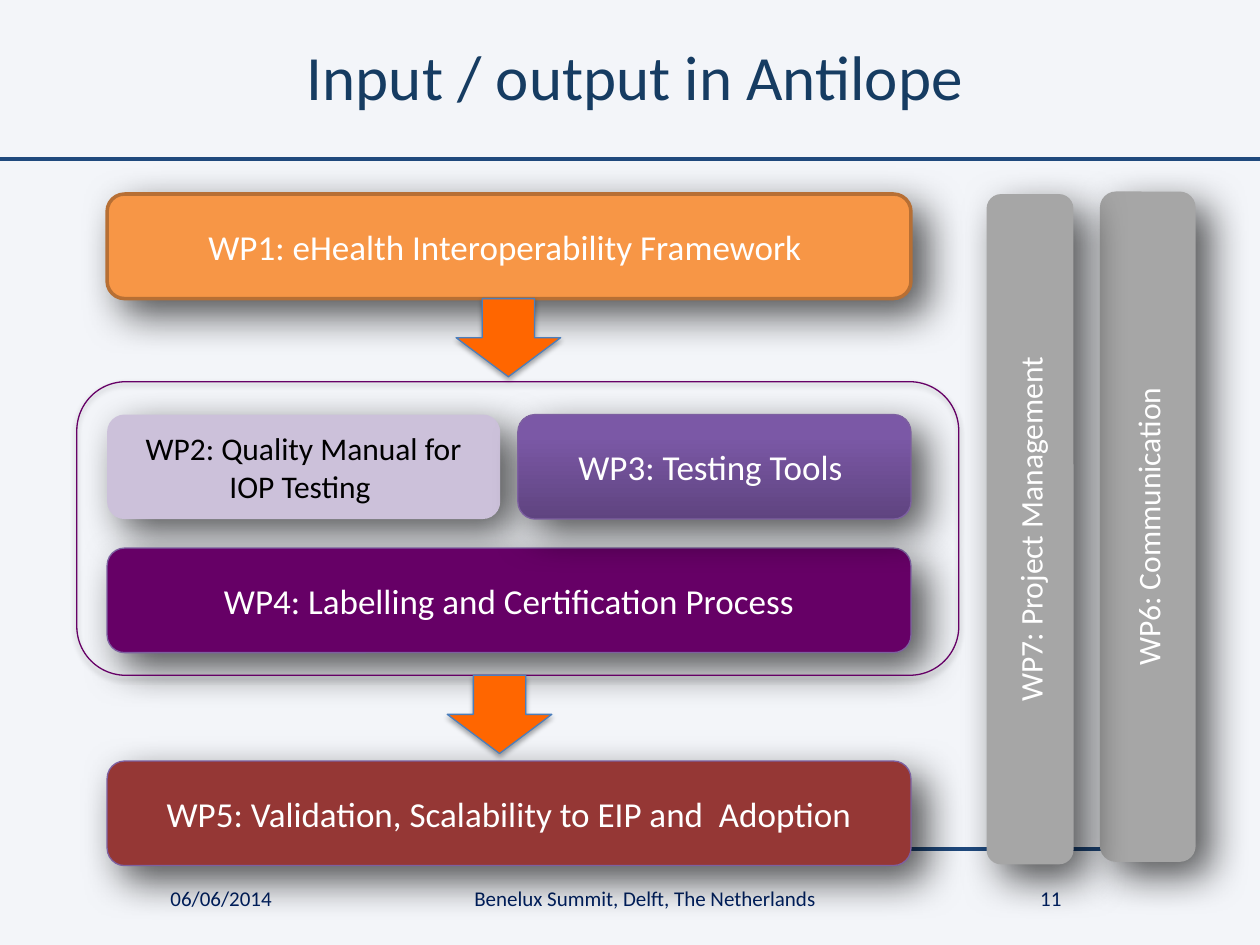
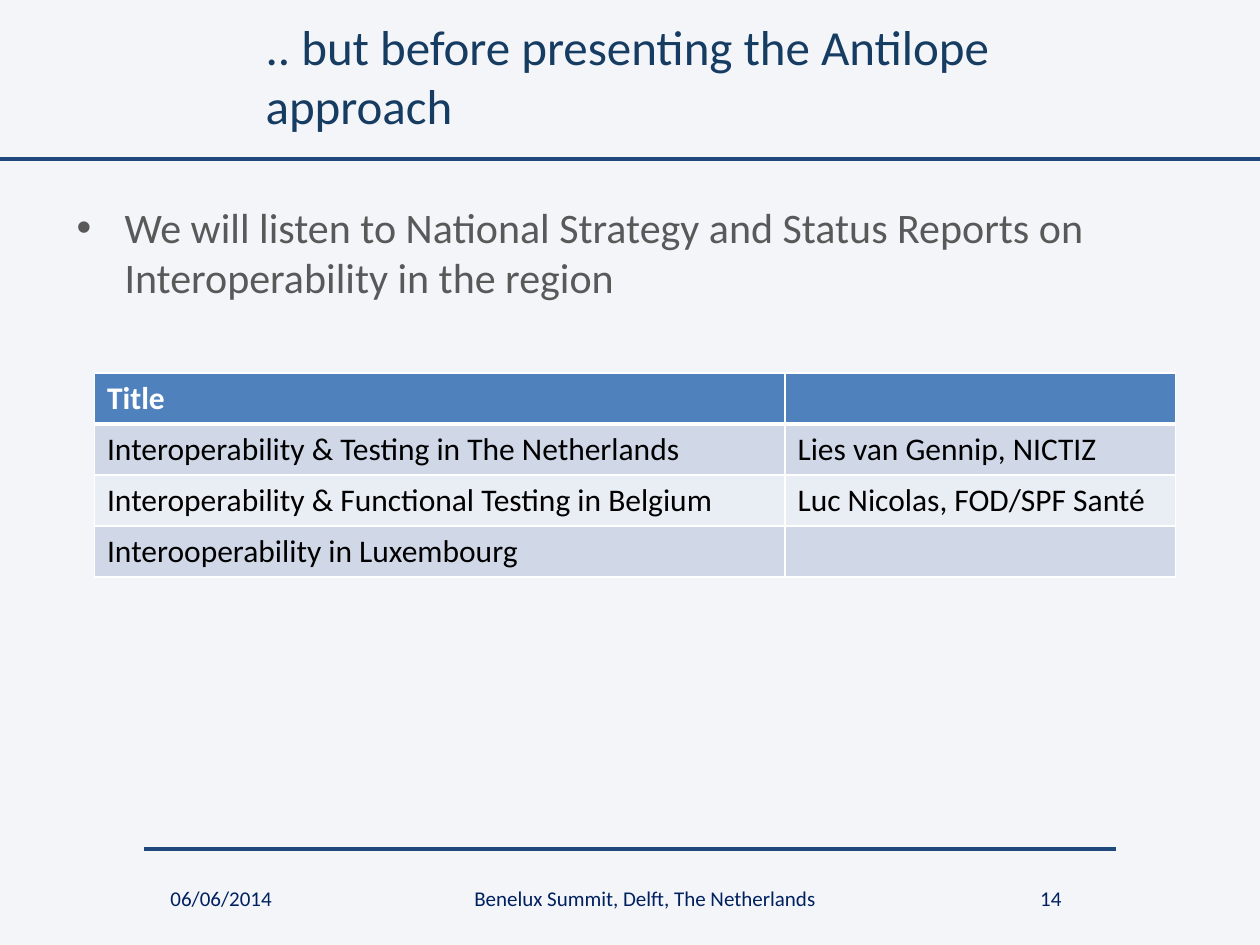
from pptx import Presentation
from pptx import util as u
from pptx.dml.color import RGBColor
from pptx.enum import shapes, text
from pptx.oxml import ns
from lxml import etree

SCALE = 9144  # EMU in one px, 100 px to the inch
FONT = "Calibri"
WHITE, BLACK = "FFFFFF", "000000"
BACKGROUND, RULE, TITLE, FOOTER, BODY = "F3F5F9", "1F497D", "163C62", "002060", "595959"
GREY, ORANGE, OUTLINE, PURPLE = "A6A6A6", "FF6600", "7D60A0", "660066"
HEADER, BAND_DARK, BAND_LIGHT = "4F81BD", "D0D8E8", "E9EDF4"
CENTER, LEFT = text.PP_ALIGN.CENTER, text.PP_ALIGN.LEFT
TOP, MIDDLE = text.MSO_ANCHOR.TOP, text.MSO_ANCHOR.MIDDLE
ROUNDED, ARROW = shapes.MSO_SHAPE.ROUNDED_RECTANGLE, shapes.MSO_SHAPE.DOWN_ARROW

# Shadows: opacity %, blur pt, distance pt, direction in degrees
DEEP, SOFT = (65, 23, 11, 45), (35, 3.1, 1.8, 90)


def px(*lengths):
    return [u.Emu(length * SCALE) for length in lengths]


def color(value):
    return RGBColor.from_string(value)


def add_xml(parent, tag, **attributes):
    values = {name: str(value) for name, value in attributes.items()}
    return etree.SubElement(parent, ns.qn(tag), values)


class Deck:
    """Holds the shared style and the current slide."""

    def __init__(self):
        self.presentation = Presentation()
        self.presentation.slide_width, self.presentation.slide_height = px(1000, 750)
        self.slide = None

    def new_slide(self, title, number, size, align):
        self.slide = self.presentation.slides.add_slide(self.presentation.slide_layouts[6])
        fill = self.slide.background.fill
        fill.solid()
        fill.fore_color.rgb = color(BACKGROUND)
        self.rule(0, 1000, 126)
        self.rule(114, 886, 674)
        self.text_box((201, 5, 606, 110), title, size, TITLE, align, MIDDLE)
        footers = ((114, 123, "06/06/2014"),
                   (264, 496, "Benelux Summit, Delft, The Netherlands"),
                   (783, 102, number))
        for left, width, words in footers:
            self.text_box((left, 698, width, 40), words, 12, FOOTER, CENTER)

    def rule(self, start, end, y):
        line = self.slide.shapes.add_connector(
            shapes.MSO_CONNECTOR.STRAIGHT, *px(start, y, end, y))
        line.line.color.rgb = color(RULE)
        line.line.width = u.Pt(2.25)
        add_xml(line.element.spPr, "a:effectLst")

    def style_font(self, paragraph, size, ink, bold=False):
        for run in paragraph.runs:
            font = run.font
            font.name, font.size, font.bold = FONT, u.Pt(size), bold
            font.color.rgb = color(ink)

    def set_text(self, frame, words, size, ink, align, anchor):
        frame.word_wrap = True
        frame.vertical_anchor = anchor
        frame.text = words
        paragraph = frame.paragraphs[0]
        paragraph.alignment = align
        self.style_font(paragraph, size, ink)
        return paragraph

    def text_box(self, box, words, size, ink, align=LEFT, anchor=TOP):
        shape = self.slide.shapes.add_textbox(*px(*box))
        return self.set_text(shape.text_frame, words, size, ink, align, anchor)

    def bullet(self, box, words, size, ink):
        paragraph = self.text_box(box, words, size, ink)
        properties = paragraph._p.get_or_add_pPr()
        properties.set("marL", str(38 * SCALE))
        properties.set("indent", str(-38 * SCALE))
        add_xml(properties, "a:buFont", typeface="Arial")
        add_xml(properties, "a:buChar", char="•")

    def shape(self, kind, box, fill=None, line=None, width=0.75, shadow=SOFT):
        shape = self.slide.shapes.add_shape(kind, *px(*box))
        if fill:
            shape.fill.solid()
            shape.fill.fore_color.rgb = color(fill)
        else:
            shape.fill.background()
        if line:
            shape.line.color.rgb = color(line)
            shape.line.width = u.Pt(width)
        else:
            shape.line.fill.background()
        self.shadow(shape, *shadow)
        return shape

    def shadow(self, shape, opacity, blur, distance, direction):
        shape.shadow.inherit = False
        effects = shape.element.spPr.find(ns.qn("a:effectLst"))
        outer = add_xml(effects, "a:outerShdw", blurRad=u.Pt(blur), dist=u.Pt(distance),
                        dir=direction * 60000, algn="ctr", rotWithShape=0)
        add_xml(add_xml(outer, "a:srgbClr", val=BLACK), "a:alpha", val=opacity * 1000)

    def package_box(self, box, words, fill, line=None, size=20, ink=WHITE, width=0.75):
        shape = self.shape(ROUNDED, box, fill, line, width, DEEP)
        self.set_text(shape.text_frame, words, size, ink, CENTER, MIDDLE)
        return shape

    def upright_box(self, box, words):
        shape = self.package_box(box, words, GREY, size=18)
        shape.element.find(".//" + ns.qn("a:bodyPr")).set("vert", "vert270")

    def gradient(self, shape, bottom, top):
        shape.fill.gradient()
        shape.fill.gradient_angle = 90
        for stop, ink, position in zip(shape.fill.gradient_stops, (bottom, top), (0, 0.8)):
            stop.color.rgb = color(ink)
            stop.position = position

    def arrow(self, left, top):
        self.shape(ARROW, (left, top, 83, 62), ORANGE, "4B7EBC")

    def borders(self, cell, row):
        properties = cell._tc.get_or_add_tcPr()
        widths = {"L": 1, "R": 1, "T": 3 if row == 1 else 1, "B": 3 if row == 0 else 1}
        for side, points in widths.items():
            line = add_xml(properties, "a:ln" + side, w=u.Pt(points))
            add_xml(add_xml(line, "a:solidFill"), "a:srgbClr", val=WHITE)

    def table(self, box, column_widths, rows):
        table = self.slide.shapes.add_table(len(rows), len(column_widths), *px(*box)).table
        for column, width in zip(table.columns, px(*column_widths)):
            column.width = width
        for r, row in enumerate(rows):
            header = r == 0
            fill = HEADER if header else (BAND_LIGHT, BAND_DARK)[r % 2]
            for c, words in enumerate(row):
                cell = table.cell(r, c)
                self.borders(cell, r)
                cell.fill.solid()
                cell.fill.fore_color.rgb = color(fill)
                cell.text_frame.text = words
                self.style_font(cell.text_frame.paragraphs[0], 18,
                                WHITE if header else BLACK, header)


def main():
    deck = Deck()
    left, width, half, height = 85, 638, 312, 83
    right = left + width - half

    # Slide 1: work packages
    deck.new_slide("Input / output in Antilope", "11", 36, CENTER)
    deck.package_box((left, 154, width, height), "WP1: eHealth Interoperability Framework ",
                     "F79646", "B76F34", width=2)
    deck.arrow(362, 237)
    deck.package_box((left, 329, half, height), "WP2: Quality Manual for IOP Testing ",
                     "CCC1DA", size=18, ink=BLACK)
    deck.package_box((left, 435, width, height), "WP4: Labelling and Certification Process",
                     PURPLE, OUTLINE)
    deck.shape(ROUNDED, (61, 303, 700, 233), line=PURPLE)
    deck.upright_box((873, 152, 76, 532), "WP6: Communication")
    deck.upright_box((783, 154, 69, 532), "WP7: Project Management")
    testing_tools = deck.package_box((right, 329, half, height), "WP3: Testing Tools ",
                                     OUTLINE, OUTLINE)
    deck.gradient(testing_tools, "5F4480", "7B58A6")
    deck.package_box((left, 604, width, height),
                     "WP5: Validation, Scalability to EIP and  Adoption", "953735", OUTLINE)
    deck.arrow(355, 536)

    # Slide 2: national reports
    deck.new_slide(".. but before presenting the Antilope approach", "14", 28, LEFT)
    deck.bullet((51, 155, 898, 480),
                "We will listen to National Strategy and Status Reports on "
                "Interoperability in the region", 24, BODY)
    deck.table((75, 296, 858, 162), (548, 310), (
        ("Title", ""),
        ("Interoperability & Testing in The Netherlands", "Lies van Gennip, NICTIZ"),
        ("Interoperability & Functional Testing in Belgium", "Luc Nicolas, FOD/SPF Santé"),
        ("Interooperability in Luxembourg", ""),
    ))
    deck.presentation.save("out.pptx")


if __name__ == "__main__":
    main()
